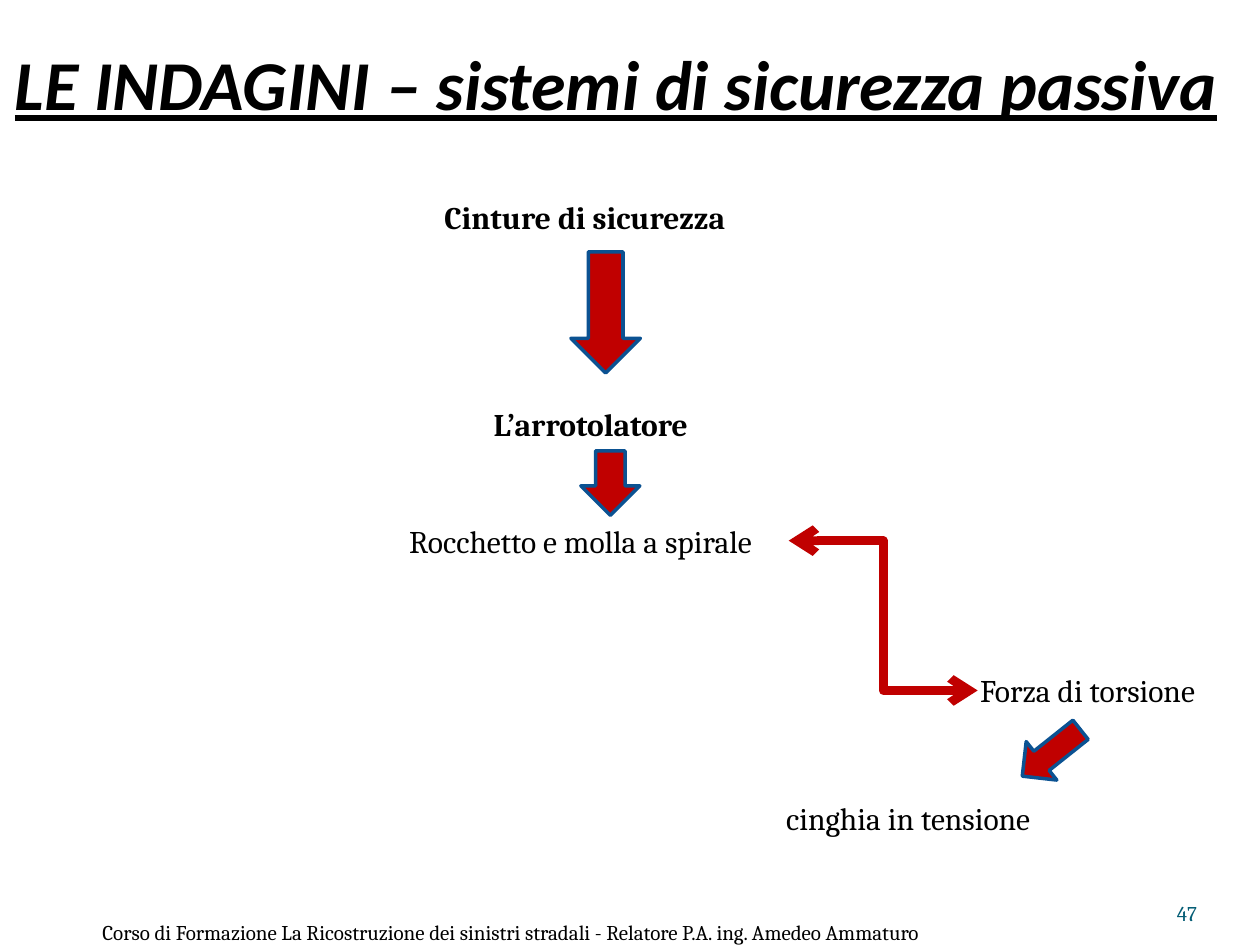
from lxml import etree
from pptx import Presentation
from pptx.dml.color import RGBColor
from pptx.enum import shapes, text
from pptx.oxml import ns
from pptx.util import Cm, Pt

BLACK = RGBColor(0x00, 0x00, 0x00)
TEAL = RGBColor(0x04, 0x5D, 0x75)
RED = RGBColor(0xC0, 0x00, 0x00)
BLUE = RGBColor(0x0B, 0x52, 0x92)

prs = Presentation()
prs.slide_width, prs.slide_height = Cm(25.4), Cm(19.05)
s = prs.slides.add_slide(prs.slide_layouts[6])


def add_text(box, content, size, font="Cambria", color=BLACK, bold=False):
    """Add a one-line text box; box is left, top, width, height in cm."""
    sp = s.shapes.add_textbox(*[Cm(v) for v in box])
    tf = sp.text_frame
    tf.word_wrap = True
    p = tf.paragraphs[0]
    r = p.add_run()
    r.text = content
    r.font.name, r.font.size, r.font.bold = font, Pt(size), bold
    r.font.color.rgb = color
    return tf, p, r


# Title
tf, p, r = add_text((0.3, 0.13, 26.8, 2.39), "LE INDAGINI – sistemi di sicurezza passiva",
                    40, "Calibri", bold=True)
r.font.italic = r.font.underline = True
tf.vertical_anchor = text.MSO_ANCHOR.BOTTOM
tf.margin_left = tf.margin_right = tf.margin_bottom = 0

# Footer and slide number
footers = [
    ((0.05, 18.03, 20.5, 1.02),
     "Corso di Formazione La Ricostruzione dei sinistri stradali - Relatore P.A. ing. Amedeo Ammaturo",
     BLACK, text.PP_ALIGN.CENTER),
    ((22.02, 17.65, 2.11, 1.02), "47", TEAL, text.PP_ALIGN.RIGHT),
]
for box, content, color, align in footers:
    tf, p, r = add_text(box, content, 12, color=color)
    p.alignment = align
    tf.vertical_anchor = text.MSO_ANCHOR.BOTTOM
    tf.margin_left = tf.margin_right = tf.margin_top = tf.margin_bottom = 0

# Steps: left, top, width, wording, bold
steps = [
    (8.71, 3.86, 7.8, "Cinture di sicurezza", True),
    (9.7, 8.05, 7.8, "L’arrotolatore", True),
    (8.0, 10.39, 9.8, "Rocchetto e molla a spirale", False),
    (19.51, 13.41, 5.59, "Forza di torsione", False),
    (15.6, 15.98, 6.71, "cinghia in tensione", False),
]
for left, top, width, content, bold in steps:
    tf, p, r = add_text((left, top, width, 1.02), content, 18, bold=bold)
    tf.auto_size = text.MSO_AUTO_SIZE.SHAPE_TO_FIT_TEXT

# Block arrows: left, top, width, height, rotation
arrows = [
    (11.51, 5.08, 1.4, 2.44, 0),
    (11.71, 9.09, 1.19, 1.3, 0),
    (20.7, 14.43, 0.99, 1.5, 51.5),
]
for *box, rotation in arrows:
    sp = s.shapes.add_shape(shapes.MSO_SHAPE.DOWN_ARROW, *[Cm(v) for v in box])
    sp.rotation = rotation
    sp.shadow.inherit = False
    sp.fill.solid()
    sp.fill.fore_color.rgb = RED
    sp.line.color.rgb = BLUE
    sp.line.width = Pt(2)

# Two-way elbow between the spool and the torsion force
cxn = s.shapes.add_connector(shapes.MSO_CONNECTOR.ELBOW,
                             Cm(15.9), Cm(10.9), Cm(19.71), Cm(13.92))
cxn.line.color.rgb = RED
cxn.line.width = Pt(5)
ln = cxn.line._get_or_add_ln()
for end in ("a:headEnd", "a:tailEnd"):
    etree.SubElement(ln, ns.qn(end), type="arrow")
etree.SubElement(cxn._element.spPr, ns.qn("a:effectLst"))

prs.save("out.pptx")
